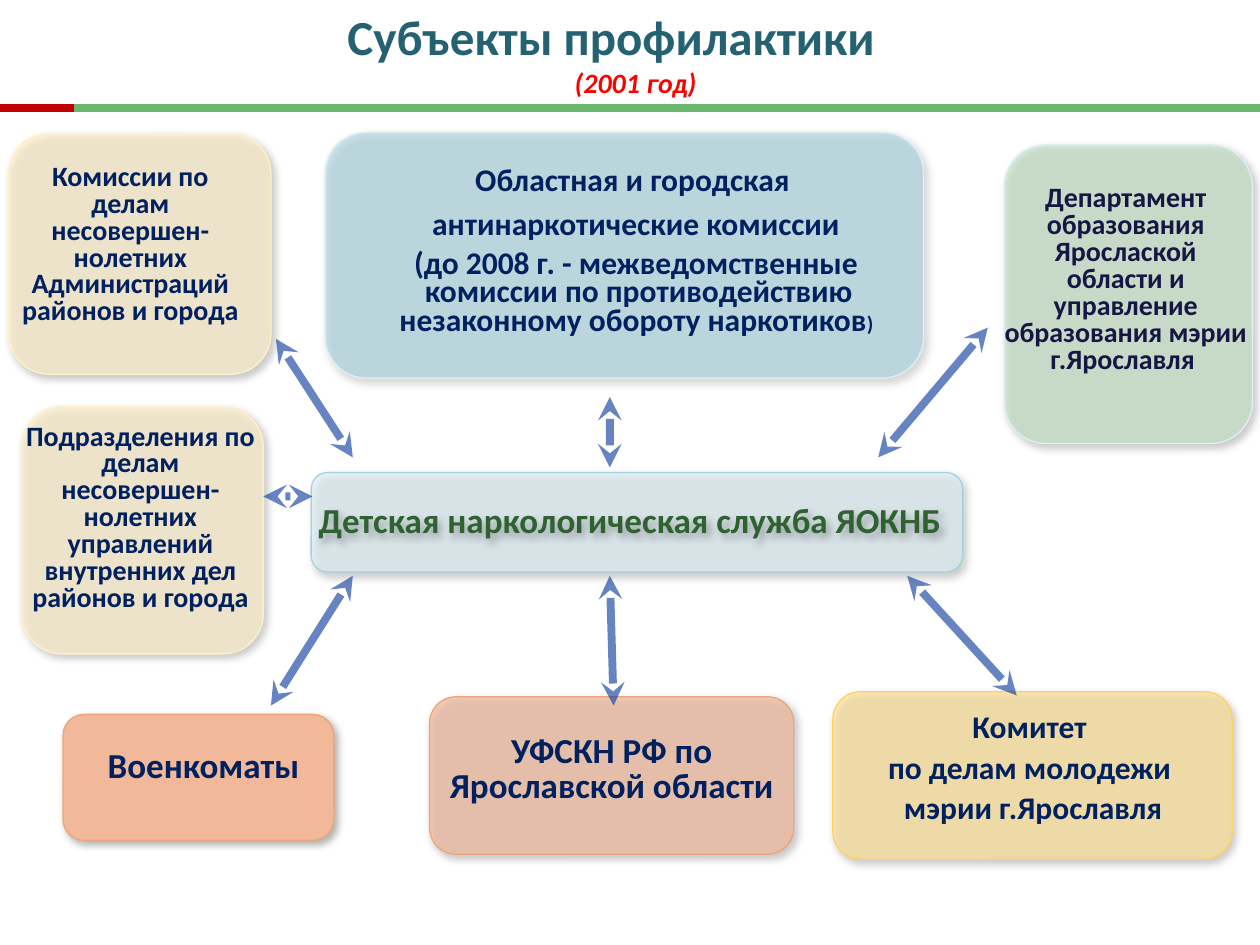
"""Build the slide on the bodies that took part in drug prevention in 2001."""
from pptx import Presentation
from pptx.dml.color import RGBColor
from pptx.enum.shapes import MSO_CONNECTOR, MSO_SHAPE
from pptx.enum.text import MSO_ANCHOR, MSO_AUTO_SIZE, PP_ALIGN
from pptx.oxml import parse_xml
from pptx.oxml.ns import nsdecls, qn
from pptx.oxml.xmlchemy import OxmlElement
from pptx.util import Inches, Pt

NAVY = RGBColor(0x00, 0x20, 0x60)
INK = RGBColor(0x16, 0x16, 0x45)
BLUE = RGBColor(0x00, 0x33, 0x99)
TEAL = RGBColor(0x24, 0x61, 0x72)
MOSS = RGBColor(0x2F, 0x62, 0x31)
LEAF = RGBColor(0x6B, 0xB7, 0x6D)
MINT = RGBColor(0xC4, 0xE2, 0xC5)
SKY = RGBColor(0xA0, 0xD3, 0xE0)
ICE = RGBColor(0xDF, 0xF0, 0xF5)
SAND = RGBColor(0xFF, 0xF0, 0xC9)
GOLD = RGBColor(0xFF, 0xE1, 0x93)
AMBER = RGBColor(0xFF, 0xD2, 0x5D)
PEACH = RGBColor(0xF1, 0xB8, 0x99)
CORAL = RGBColor(0xED, 0xA4, 0x7B)
RED = RGBColor(0xFF, 0x00, 0x00)
WINE = RGBColor(0xC0, 0x00, 0x00)

BOXES = [
    ((3.41, 5.53, 2.89, 1.25), PEACH, 67, CORAL),
    ((2.58, 1.05, 4.75, 1.95), SKY, 50, ICE),
    ((2.47, 3.75, 5.17, 0.79), ICE, 65, SKY),
    ((7.97, 1.15, 1.97, 2.37), MINT, 65, ICE),
    ((6.61, 5.49, 3.17, 1.33), GOLD, 65, AMBER),
    ((0.5, 5.67, 2.15, 1), PEACH, 100, CORAL),
    ((0.17, 3.23, 1.92, 1.96), SAND, 66, SAND),
    ((0.07, 1.06, 2.08, 1.91), SAND, 66, SAND),
]
LABELS = [
    ((7.95, 1.43, 1.97, 1.81), 16, INK, 0.8, 0.02,
     ["Департамент образования Ярослаской области и управление "
      "образования мэрии г.Ярославля "]),
    ((3.36, 5.78, 2.99, 0.68), 20, NAVY, 0.85, 0.1,
     ["УФСКН РФ по Ярославской области"]),
    ((6.71, 5.6, 2.98, 1.03), 18, NAVY, 0.9, 0.1,
     ["Комитет ", "по делам молодежи ", "мэрии г.Ярославля"]),
    ((0.59, 5.94, 2.05, 0.55), 20, NAVY, 0.7, 0.02, ["Военкоматы"]),
    ((0, 1.26, 2.07, 1.4), 16, NAVY, 0.8, 0.1,
     ["Комиссии по делам несовершен-нолетних Администраций "
      "районов и города"]),
    ((0.08, 3.32, 2.07, 1.61), 16, NAVY, 0.8, 0.1,
     ["Подразделения по делам несовершен-нолетних управлений "
      "внутренних дел районов и города"]),
]
BOARD = [
    ("Областная и городская", 9),
    (" антинаркотические комиссии", 9),
    (" (до 2008 г. - межведомственные комиссии по противодействию "
     "незаконному обороту наркотиков", 6),
]
ARROWS = [
    (4.84, 3.71, 4.84, 3.15),
    (7.84, 2.6, 6.97, 3.63),
    (2.19, 2.69, 2.8, 3.63),
    (2.09, 3.94, 2.48, 3.94),
    (8.07, 5.52, 7.2, 4.57),
    (4.84, 4.57, 4.87, 5.6),
    (2.8, 4.57, 2.15, 5.6),
]
RULES = [((0.59, 0.86, 10, 0.86), LEAF), ((0, 0.86, 0.59, 0.86), WINE)]


def fade(shape, share):
    color = shape._element.spPr.find(f".//{qn('a:srgbClr')}")
    alpha = OxmlElement("a:alpha")
    alpha.set("val", str(share * 1000))
    color.append(alpha)


def shade(shape):
    shape.shadow.inherit = False
    shape._element.spPr.find(qn("a:effectLst")).append(parse_xml(
        f'<a:outerShdw {nsdecls("a")} blurRad="{Pt(4.5)}" dist="{Pt(2.6)}" '
        f'dir="{53 * 60000}"><a:srgbClr val="000000"><a:alpha val="30000"/>'
        '</a:srgbClr></a:outerShdw>'))


def add_box(slide, place, fill, share, edge):
    box = slide.shapes.add_shape(
        MSO_SHAPE.ROUNDED_RECTANGLE, *map(Inches, place))
    box.fill.solid()
    box.fill.fore_color.rgb = fill
    box.line.color.rgb = edge
    box.line.width = Pt(0.75)
    fade(box, share)
    shade(box)


def add_text(slide, place, size, color, lines, pad=0.1):
    box = slide.shapes.add_textbox(*map(Inches, place))
    frame = box.text_frame
    frame.word_wrap = True
    frame.auto_size = MSO_AUTO_SIZE.SHAPE_TO_FIT_TEXT
    frame.margin_left = frame.margin_right = Inches(pad)
    frame.text = "\n".join(lines)
    for para in frame.paragraphs:
        para.alignment = PP_ALIGN.CENTER
        font = para.font
        font.name, font.size, font.bold = "Calibri", Pt(size), True
        font.color.rgb = color
    return box


def add_line(slide, ends, color):
    line = slide.shapes.add_connector(
        MSO_CONNECTOR.STRAIGHT, *map(Inches, ends))
    line.line.color.rgb = color
    line.line.width = Pt(4.5)
    line._element.spPr.append(OxmlElement("a:effectLst"))
    return line


def add_arrow(slide, ends):
    arrow = add_line(slide, ends, BLUE)
    fade(arrow, 60)
    for tag in ("a:headEnd", "a:tailEnd"):
        tip = OxmlElement(tag)
        tip.set("type", "stealth")
        arrow.line._get_or_add_ln().append(tip)


def add_board(slide):
    box = add_text(slide, (2.66, 1.29, 4.72, 1.48), 18, NAVY,
                   [text for text, gap in BOARD])
    for para, (text, gap) in zip(box.text_frame.paragraphs, BOARD):
        para.line_spacing = 0.75
        para.space_before = Pt(gap)
        props = para._p.get_or_add_pPr()
        props.set("marL", str(Inches(0.1)))
        props.set("indent", str(Inches(-0.1)))
    end = para.add_run()
    end.text = ") "
    end.font.size = Pt(12)


def add_title(slide):
    box = add_text(slide, (2.66, 0, 4.77, 0.84), 28, TEAL,
                   ["Субъекты профилактики", "(2001 год)"])
    frame = box.text_frame
    frame.auto_size = MSO_AUTO_SIZE.NONE
    frame.vertical_anchor = MSO_ANCHOR.MIDDLE
    head, year = frame.paragraphs
    head.alignment = PP_ALIGN.LEFT
    year.font.size, year.font.italic = Pt(16), True
    year.font.color.rgb = RED


def main():
    deck = Presentation()
    deck.slide_width, deck.slide_height = Inches(10), Inches(7.5)
    slide = deck.slides.add_slide(deck.slide_layouts[6])
    for box in BOXES:
        add_box(slide, *box)
    add_board(slide)
    core = add_text(slide, (2.4, 3.91, 5.2, 0.44), 20, MOSS,
                    ["Детская наркологическая служба ЯОКНБ"])
    core.text_frame.paragraphs[0].space_before = Pt(10)
    shade(core)
    for place, size, color, pitch, pad, lines in LABELS:
        label = add_text(slide, place, size, color, lines, pad)
        for para in label.text_frame.paragraphs:
            para.line_spacing = pitch
            para.space_before = Pt(size * 0.2)
    for ends in ARROWS:
        add_arrow(slide, ends)
    add_title(slide)
    for ends, color in RULES:
        add_line(slide, ends, color)
    deck.save("out.pptx")


if __name__ == "__main__":
    main()
